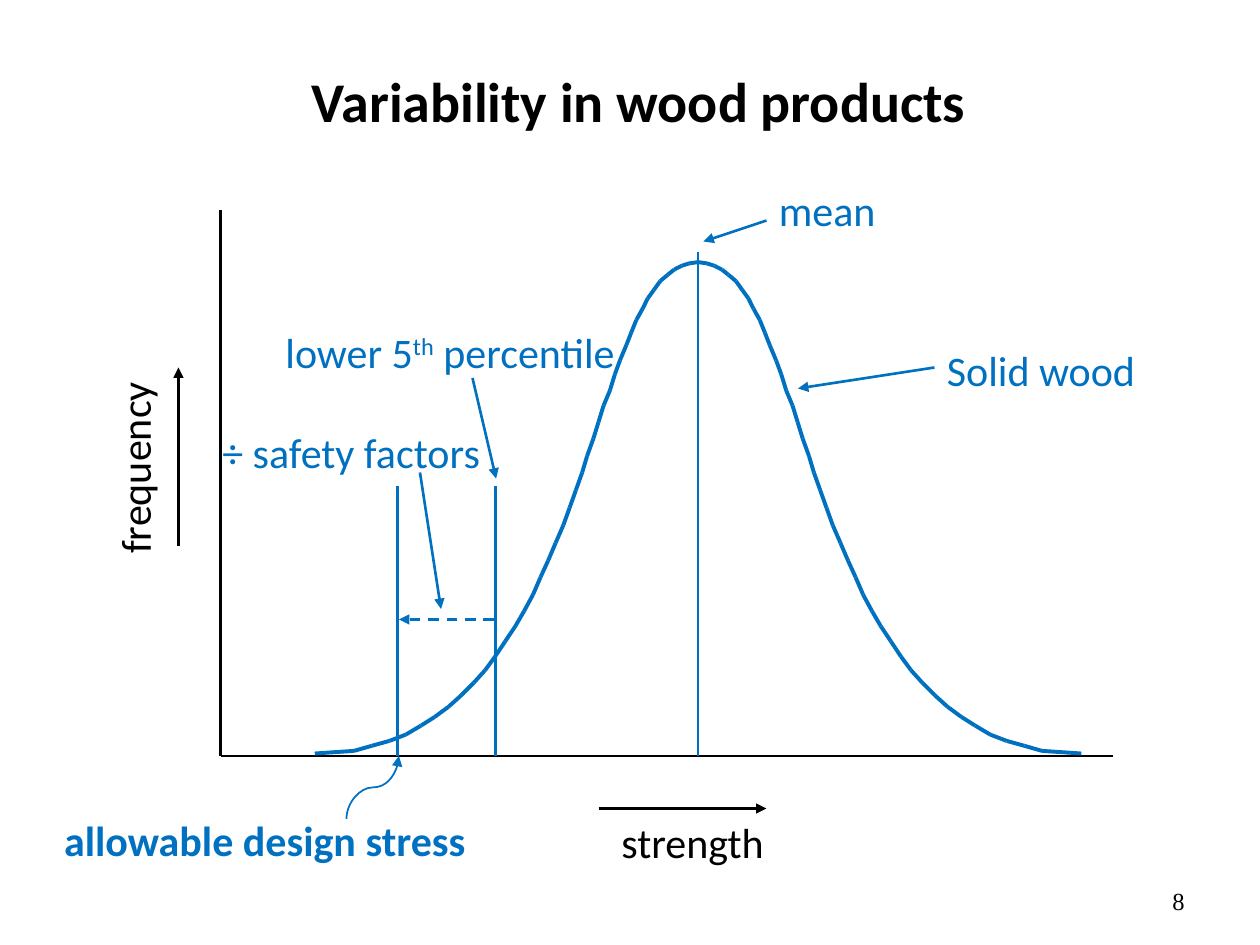
from collections import namedtuple
from itertools import pairwise

from lxml import etree
from pptx import Presentation
from pptx.dml.color import RGBColor
from pptx.enum.dml import MSO_LINE
from pptx.enum.shapes import MSO_CONNECTOR
from pptx.enum.text import MSO_ANCHOR, MSO_AUTO_SIZE, PP_ALIGN
from pptx.oxml.ns import qn
from pptx.util import Pt

STRAIGHT, CURVED = MSO_CONNECTOR.STRAIGHT, MSO_CONNECTOR.CURVE
DASH = MSO_LINE.DASH
TOP, MIDDLE = MSO_ANCHOR.TOP, MSO_ANCHOR.MIDDLE
LEFT, CENTER, RIGHT = PP_ALIGN.LEFT, PP_ALIGN.CENTER, PP_ALIGN.RIGHT
FIT_SHAPE = MSO_AUTO_SIZE.SHAPE_TO_FIT_TEXT

BLACK = RGBColor(0x00, 0x00, 0x00)
BLUE = RGBColor(0x00, 0x70, 0xC0)

Box = namedtuple("Box", "left top width height")

TITLE_BOX = Box(41.2, 12, 648, 90)
PLOT_BOX = Box(126, 120, 510, 312)
PAGE_NUMBER_BOX = Box(516, 500.4, 168, 28.8)

LABEL_FORMAT = {"name": "Calibri", "size": Pt(24), "bold": False}
LABEL_HEIGHT = 36.7

# Positions along the strength axis, from the left of the plot
MEAN, PERCENTILE, ALLOWABLE = 272.9, 157, 101.3

# Half of the bell: distance from the mean, height above the axis
HALF_BELL = [
    (219, 1.4), (207.4, 2.2), (196.6, 2.9), (186.5, 5.8), (176.4, 8.6),
    (167, 12.2), (158.4, 17.3), (150.5, 22.3), (142.6, 28.1), (135.4, 34.6),
    (128.2, 41.8), (121.7, 49), (115.9, 56.9), (110.2, 65.5), (104.4, 74.2),
    (99.4, 82.8), (94.3, 92.2), (90, 102.2), (85.7, 111.6), (81.4, 121.7),
    (77, 131.8), (73.4, 141.8), (69.8, 151.9), (66.2, 162), (63.4, 171.4),
    (59.8, 181.4), (56.9, 190.8), (54, 200.2), (50.4, 208.8), (47.5, 218.2),
    (44.6, 226.1), (41, 234.7), (38.2, 241.9), (35.3, 249.1), (31.7, 255.6),
    (28.8, 261.4), (25.2, 266.4), (21.6, 271.4), (17.3, 275), (13.7, 277.9),
    (9.4, 280.1), (5, 281.5),
]
PEAK = (0, 282.2)


def add_text(slide, box, runs, color, align=LEFT, anchor=TOP, wrap=True, **changes):
    """Add one paragraph; runs holds (text, baseline shift in percent) pairs."""
    textbox = slide.shapes.add_textbox(*map(Pt, box))
    frame = textbox.text_frame
    frame.word_wrap = wrap
    frame.vertical_anchor = anchor
    if not wrap:
        frame.auto_size = FIT_SHAPE
    paragraph = frame.paragraphs[0]
    paragraph.alignment = align
    for text, shift in runs:
        run = paragraph.add_run()
        run.text = text
        for attribute, value in {**LABEL_FORMAT, **changes}.items():
            setattr(run.font, attribute, value)
        run.font.color.rgb = color
        if shift:
            run.font._element.set("baseline", str(shift * 1000))
    return textbox


def add_label(slide, plot, left, top, width, runs, color=BLUE, bold=False):
    box = Box(plot.left + left, plot.top + top, width, LABEL_HEIGHT)
    return add_text(slide, box, runs, color, wrap=False, bold=bold)


def add_line(parent, plot, start, end, color=BLUE, width=1.5, arrow=False,
             dash=None, kind=STRAIGHT):
    """Join two points that are measured from the plot's top left corner.

    The parent is the slide or a group on it.
    """
    ends = [Pt(origin + offset) for point in (start, end)
            for origin, offset in zip(plot[:2], point)]
    connector = parent.shapes.add_connector(kind, *ends)
    connector.line.color.rgb = color
    connector.line.width = Pt(width)
    if dash:
        connector.line.dash_style = dash
    properties = connector._element.spPr
    if arrow:
        etree.SubElement(properties.find(qn("a:ln")), qn("a:tailEnd"), type="triangle")
    etree.SubElement(properties, qn("a:effectLst"))
    return connector


def add_rising_curve(slide, plot, start, end):
    """Draw an S-shaped arrow that leaves and arrives vertically."""
    middle_x, middle_y = ((a + b) / 2 for a, b in zip(start, end))
    half_width, half_height = (abs(a - b) / 2 for a, b in zip(start, end))
    # A quarter turn swaps the width and height of the flipped connector
    curve = add_line(slide, plot,
                     (middle_x + half_height, middle_y + half_width),
                     (middle_x - half_height, middle_y - half_width),
                     width=1, arrow=True, kind=CURVED)
    curve._element.spPr.find(qn("a:xfrm")).set("rot", str(90 * 60000))


def add_title(slide, box):
    add_text(slide, box, [("Variability in wood products", 0)], BLACK,
             align=CENTER, anchor=MIDDLE, size=Pt(32), bold=True)


def add_axes(slide, plot):
    corner = (0, plot.height)
    add_line(slide, plot, (0, 0), corner, BLACK)
    add_line(slide, plot, corner, (plot.width, plot.height), BLACK)
    add_line(slide, plot, (216, 342), (312, 342), BLACK, arrow=True)
    add_line(slide, plot, (-24, 192), (-24, 90), BLACK, arrow=True)
    add_label(slide, plot, 222, 343, 96.5, [("strength", 0)], BLACK)
    frequency = add_label(slide, plot, -106, 128.2, 114, [("frequency", 0)], BLACK)
    frequency.rotation = 270


def add_bell_curve(slide, plot):
    """Draw the mirrored half bell as a group of short lines."""
    outline = [(-x, y) for x, y in HALF_BELL] + [PEAK] + HALF_BELL[::-1]
    points = [(MEAN + x, plot.height - y) for x, y in outline]
    bell = slide.shapes.add_group_shape()
    for start, end in pairwise(points):
        add_line(bell, plot, start, end, width=2.25)


def add_markers(slide, plot):
    for x, top in ((MEAN, 24), (PERCENTILE, 158), (ALLOWABLE, 158)):
        add_line(slide, plot, (x, top), (x, plot.height))
    add_line(slide, plot, (156.3, 234), (102, 234), arrow=True, dash=DASH)


def add_annotations(slide, plot):
    percentile = [("lower 5", 0), ("th", 30), (" percentile", 0)]
    for left, top, width, runs, start, end in (
        (312, -18, 70.5, [("mean", 0)], (312, 6), (276, 18)),
        (408, 73.3, 123, [("Solid wood", 0)], (408, 90), (330, 102)),
        (30, 63, 206.5, percentile, (144, 96), (157.5, 153.5)),
        (-6, 120, 164, [("÷ safety factors", 0)], (114, 150), (126, 228)),
    ):
        add_label(slide, plot, left, top, width, runs)
        add_line(slide, plot, start, end, arrow=True)
    add_label(slide, plot, -96.5, 342, 248.5, [("allowable design stress", 0)], bold=True)
    add_rising_curve(slide, plot, (72, 348), (102, plot.height))


def add_page_number(slide, box):
    add_text(slide, box, [("8", 0)], BLACK, align=RIGHT, anchor=MIDDLE,
             name="Times New Roman", size=Pt(14))


def main():
    presentation = Presentation()
    presentation.slide_width, presentation.slide_height = Pt(720), Pt(540)
    slide = presentation.slides.add_slide(presentation.slide_layouts[6])
    add_title(slide, TITLE_BOX)
    for add_part in (add_axes, add_bell_curve, add_markers, add_annotations):
        add_part(slide, PLOT_BOX)
    add_page_number(slide, PAGE_NUMBER_BOX)
    presentation.save("out.pptx")


if __name__ == "__main__":
    main()
